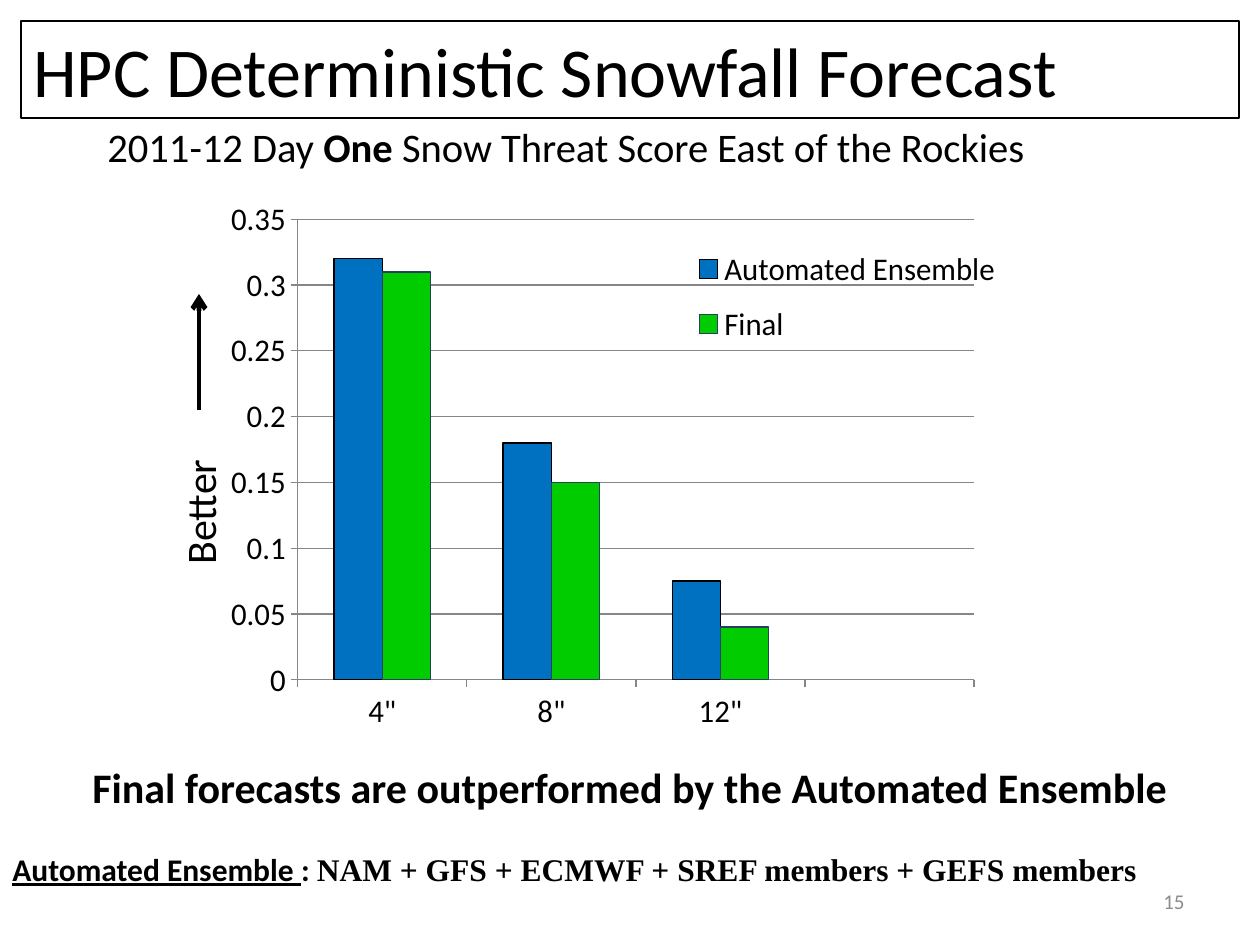
from lxml.etree import SubElement, fromstring
from pptx import Presentation
from pptx.chart.data import CategoryChartData
from pptx.dml.color import RGBColor
from pptx.enum.chart import XL_CHART_TYPE as Kind, XL_LEGEND_POSITION as Side
from pptx.enum.chart import XL_TICK_MARK as Tick
from pptx.enum.shapes import MSO_CONNECTOR as Conn, MSO_SHAPE as Form
from pptx.enum.text import MSO_ANCHOR as Anchor, PP_ALIGN as Align
from pptx.oxml.ns import qn
from pptx.util import Pt

BLACK = RGBColor(0, 0, 0)
GREY = RGBColor(0x8C, 0x8C, 0x8C)
GRID = RGBColor(0x86, 0x86, 0x86)
BLUE = RGBColor(0x00, 0x70, 0xC0)
GREEN = RGBColor(0x00, 0xCC, 0x00)
NAVY = RGBColor(0x25, 0x40, 0x61)
SANS, SERIF = "Calibri", "Times New Roman"

TITLE = "HPC Deterministic Snowfall Forecast"
SUB = ["2011-12 Day ", "One", " Snow Threat Score East of the Rockies"]
CLAIM = "Final forecasts are outperformed by the Automated Ensemble"
NOTE = ["Automated Ensemble ", ": ", "NAM + GFS + ECMWF + SREF members + GEFS members"]
DEPTHS = ['4"', '8"', '12"', ""]
SERIES = [
    ("Automated Ensemble", (0.32, 0.18, 0.075, None), BLUE, BLACK),
    ("Final", (0.31, 0.15, 0.04, None), GREEN, NAVY),
]
PLOT = (0.056, 0.035, 0.793, 0.836)
LEGEND = (0.52, 0.06, 0.36, 0.23)


def px(*nums):
    return [round(n * 914400 / 126) for n in nums]


def style(font, size, color=BLACK, bold=None):
    font.name, font.size, font.bold = SANS, Pt(size), bold
    font.color.rgb = color


def fill(para, parts, size, color=BLACK, bold=None, align=Align.LEFT):
    """Write the parts as runs of one paragraph and return the runs."""
    runs = []
    for part in parts:
        run = para.add_run()
        run.text = part
        runs.append(run)
    para.alignment = align
    style(para.font, size, color, bold)
    return runs


def box(area):
    shape = slide.shapes.add_textbox(*px(*area))
    shape.text_frame.word_wrap = True
    return shape


def stroke(line, color, width=0.75):
    line.color.rgb, line.width = color, Pt(width)


def place(elem, area, inner=False):
    """Give a chart part a manual layout, as fractions of the chart."""
    for old in elem.findall(qn("c:layout")):
        elem.remove(old)
    marks = '<c:layoutTarget val="inner"/>' if inner else ""
    marks += '<c:xMode val="edge"/><c:yMode val="edge"/>'
    marks += "".join(f'<c:{k} val="{v}"/>' for k, v in zip("xywh", area))
    node = fromstring(
        '<c:layout xmlns:c="http://schemas.openxmlformats.org/drawingml/2006/chart">'
        f"<c:manualLayout>{marks}</c:manualLayout></c:layout>")
    elem.insert(0 if inner else 1, node)


def draw_chart(area):
    data = CategoryChartData()
    data.categories = DEPTHS
    for name, vals, *_ in SERIES:
        data.add_series(name, vals)
    chart = slide.shapes.add_chart(Kind.COLUMN_CLUSTERED, *px(*area), data).chart
    style(chart.font, 18)
    chart.has_title = False
    plot = chart.plots[0]
    plot.gap_width, plot.overlap, plot.vary_by_categories = 150, 0, False
    for bars, (_, _, color, edge) in zip(plot.series, SERIES):
        bars.format.fill.solid()
        bars.format.fill.fore_color.rgb = color
        stroke(bars.format.line, edge)
    for axis in (chart.category_axis, chart.value_axis):
        axis.major_tick_mark, axis.minor_tick_mark = Tick.OUTSIDE, Tick.NONE
        stroke(axis.format.line, GRID)
    axis = chart.value_axis
    axis.minimum_scale, axis.maximum_scale, axis.major_unit = 0, 0.35, 0.05
    axis.tick_labels.number_format = "General"
    axis.tick_labels.number_format_is_linked = False
    axis.has_major_gridlines = True
    stroke(axis.major_gridlines.format.line, GRID)
    chart.has_legend = True
    key = chart.legend
    key.position, key.include_in_layout = Side.RIGHT, False
    style(key.font, 18)
    root = plot.series[0].format.line  # line formats exist before layout is set
    place(chart.plots[0]._element.getparent(), PLOT, inner=True)
    place(key._element, LEGEND)


def draw_arrow(x, low, high):
    arrow = slide.shapes.add_connector(Conn.STRAIGHT, *px(x, low, x, high))
    stroke(arrow.line, BLACK, 2.75)
    props = arrow._element.spPr
    SubElement(props.find(qn("a:ln")), qn("a:tailEnd"), type="arrow")
    SubElement(props, qn("a:effectLst"))


deck = Presentation()
deck.slide_width, deck.slide_height = px(1260, 945)
slide = deck.slides.add_slide(deck.slide_layouts[6])

head = slide.shapes.add_shape(Form.RECTANGLE, *px(21, 21, 1218, 97))
head.shadow.inherit = False
head.fill.background()
stroke(head.line, BLACK)
fill(head.text_frame.paragraphs[0], [TITLE], 40)

runs = fill(box((95, 116, 1077, 62)).text_frame.paragraphs[0], SUB, 23.2)
runs[1].font.bold = True

draw_chart((231, 200, 872, 551))

frame = box((0, 755, 1260, 190)).text_frame
fill(frame.paragraphs[0], [CLAIM], 24, bold=True, align=Align.CENTER)
note = frame.add_paragraph()
note.space_before = Pt(22)
runs = fill(note, NOTE, 18, bold=True)
runs[0].font.underline = True
runs[2].font.name = SERIF

better = box((100, 446, 199, 63))
better.rotation = 270
fill(better.text_frame.paragraphs[0], ["Better"], 24)
draw_arrow(199, 410, 294)

page = box((903, 876, 294, 50)).text_frame
page.vertical_anchor = Anchor.MIDDLE
fill(page.paragraphs[0], ["15"], 12, GREY, align=Align.RIGHT)

deck.save("out.pptx")
